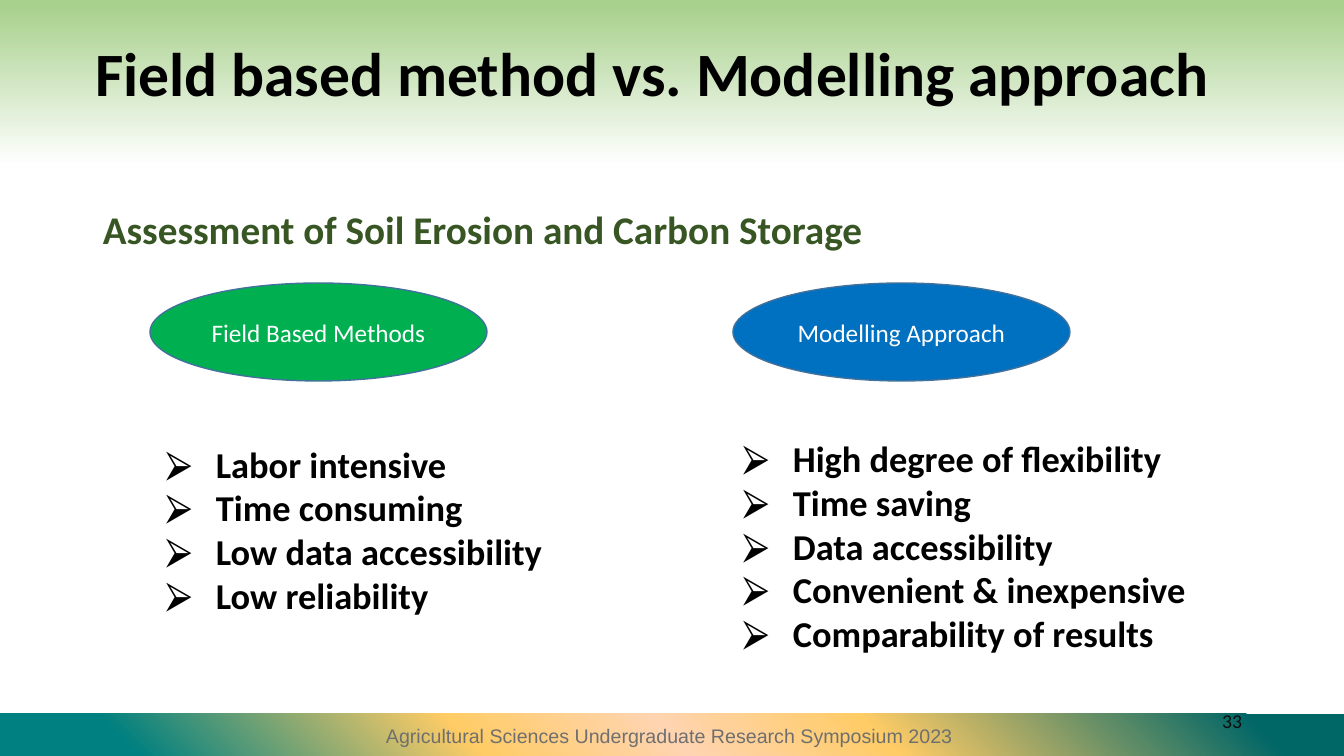
"""Build the slide comparing field based methods with the modelling approach."""
import pptx
import pptx.dml.color
import pptx.enum.shapes
import pptx.enum.text
import pptx.oxml
import pptx.oxml.ns
import pptx.util

ALIGN = pptx.enum.text.PP_ALIGN
ANCHOR = pptx.enum.text.MSO_ANCHOR
SHAPE = pptx.enum.shapes.MSO_SHAPE

COLORS = {
    "black": "000000", "white": "FFFFFF", "number": "0C0C0C",
    "footer": "6F6F6F", "heading": "385623", "outline": "42719B",
    "field": "00B050", "model": "0070C0", "leaf": "A9D18E",
    "teal": "008080", "amber": "FFCC66", "peach": "FFD4B1", "deep": "006666",
}
TITLE = "Field based method vs. Modelling approach"
HEADING = "Assessment of Soil Erosion and Carbon Storage"
FOOTER = "Agricultural Sciences Undergraduate Research Symposium 2023"
NUMBER = "33"
METHODS = [
    {"name": "Field Based Methods", "color": "field", "oval": 150,
     "list": (138, 442, 443, 174), "margin": 68, "align": ALIGN.JUSTIFY,
     "points": ["Labor intensive", "Time consuming",
                "Low data accessibility", "Low reliability"]},
    {"name": "Modelling Approach", "color": "model", "oval": 733,
     "list": (733, 442, 492, 207), "margin": 50, "align": ALIGN.LEFT,
     "points": ["High degree of flexibility", "Time saving", "Data accessibility",
                "Convenient & inexpensive", "Comparability of results"]},
]
SKY_STOPS = [(1, "leaf"), (22, "white")]
BAND_STOPS = [(0, "teal"), (10, "teal"), (35, "amber"), (50, "peach"),
              (65, "amber"), (93, "deep"), (100, "deep")]
DOWNWARD = '<a:lin {ns} ang="5400000" scaled="0"/>'
FROM_CORNER = ('<a:path {ns} path="circle">'
               '<a:fillToRect t="100000" r="100000"/></a:path>')
WIDTH, HEIGHT = 1344, 756
OVAL_TOP, OVAL_WIDTH, OVAL_HEIGHT = 283, 337, 98
HANG = 50
BULLET = "⮚"


def px(length):
    return round(length * 914400 / 100.8)


def rgb(name):
    return pptx.dml.color.RGBColor.from_string(COLORS[name])


def make_xml(markup):
    return pptx.oxml.parse_xml(markup.format(ns=pptx.oxml.ns.nsdecls("a")))


def paint_gradient(owner, fill, stops, direction):
    fill.gradient()
    gradient = owner.element.xpath(".//a:gradFill")[0]
    for child in list(gradient):
        gradient.remove(child)
    marks = "".join(
        f'<a:gs pos="{place * 1000}"><a:srgbClr val="{COLORS[name]}"/></a:gs>'
        for place, name in stops)
    gradient.append(make_xml("<a:gsLst {ns}>" + marks + "</a:gsLst>"))
    gradient.append(make_xml(direction))


def add_bullet(para, margin):
    props = para._p.get_or_add_pPr()
    props.set("marL", str(px(margin)))
    props.set("indent", str(-px(HANG)))
    for markup in (f'<a:buClr {{ns}}><a:srgbClr val="{COLORS["black"]}"/></a:buClr>',
                   '<a:buFont {ns} typeface="Arial"/>',
                   f'<a:buChar {{ns}} char="{BULLET}"/>'):
        props.append(make_xml(markup))


def write(shape, lines, size, color="black", bold=False, font="Calibri",
          align=ALIGN.LEFT, anchor=ANCHOR.MIDDLE, spacing=None, margin=None):
    frame = shape.text_frame
    frame.word_wrap = True
    frame.auto_size = pptx.enum.text.MSO_AUTO_SIZE.NONE
    frame.vertical_anchor = anchor
    for index, line in enumerate(lines):
        para = frame.add_paragraph() if index else frame.paragraphs[0]
        para.alignment = align
        if spacing:
            para.line_spacing = spacing
        if margin:
            add_bullet(para, margin)
        span = para.add_run()
        span.text = line
        span.font.size = pptx.util.Pt(size)
        span.font.name = font
        span.font.bold = bold
        span.font.color.rgb = rgb(color)


def add_box(page, place):
    return page.shapes.add_textbox(*map(px, place))


def add_plain_shape(page, kind, place):
    shape = page.shapes.add_shape(kind, *map(px, place))
    shape.shadow.inherit = False
    return shape


def main():
    deck = pptx.Presentation()
    deck.slide_width, deck.slide_height = px(WIDTH), px(HEIGHT)
    page = deck.slides.add_slide(deck.slide_layouts[5])
    paint_gradient(page, page.background.fill, SKY_STOPS, DOWNWARD)

    band = add_plain_shape(page, SHAPE.RECTANGLE, (0, 714, WIDTH, HEIGHT - 714))
    paint_gradient(band, band.fill, BAND_STOPS, FROM_CORNER)
    band.line.fill.background()
    write(add_box(page, (112, 716, 1115, 40)), [FOOTER], 14, "footer",
          font="Arial", align=ALIGN.CENTER)
    write(add_box(page, (950, 701, 302, 40)), [NUMBER], 14, "number",
          align=ALIGN.RIGHT)

    title = page.shapes.title
    title.left, title.top, title.width, title.height = map(px, (85, 27, 1243, 99))
    write(title, [TITLE], 44, bold=True, spacing=0.9)
    write(add_box(page, (93, 206, 1159, 60)), [HEADING], 28, "heading",
          bold=True, anchor=ANCHOR.TOP, spacing=0.9)

    for method in METHODS:
        oval = add_plain_shape(page, SHAPE.OVAL,
                               (method["oval"], OVAL_TOP, OVAL_WIDTH, OVAL_HEIGHT))
        oval.fill.solid()
        oval.fill.fore_color.rgb = rgb(method["color"])
        oval.line.color.rgb = rgb("outline")
        oval.line.width = pptx.util.Pt(1)
        write(oval, [method["name"]], 18, "white", align=ALIGN.CENTER)
        write(add_box(page, method["list"]), method["points"], 26, bold=True,
              align=method["align"], margin=method["margin"])

    deck.save("out.pptx")


if __name__ == "__main__":
    main()
